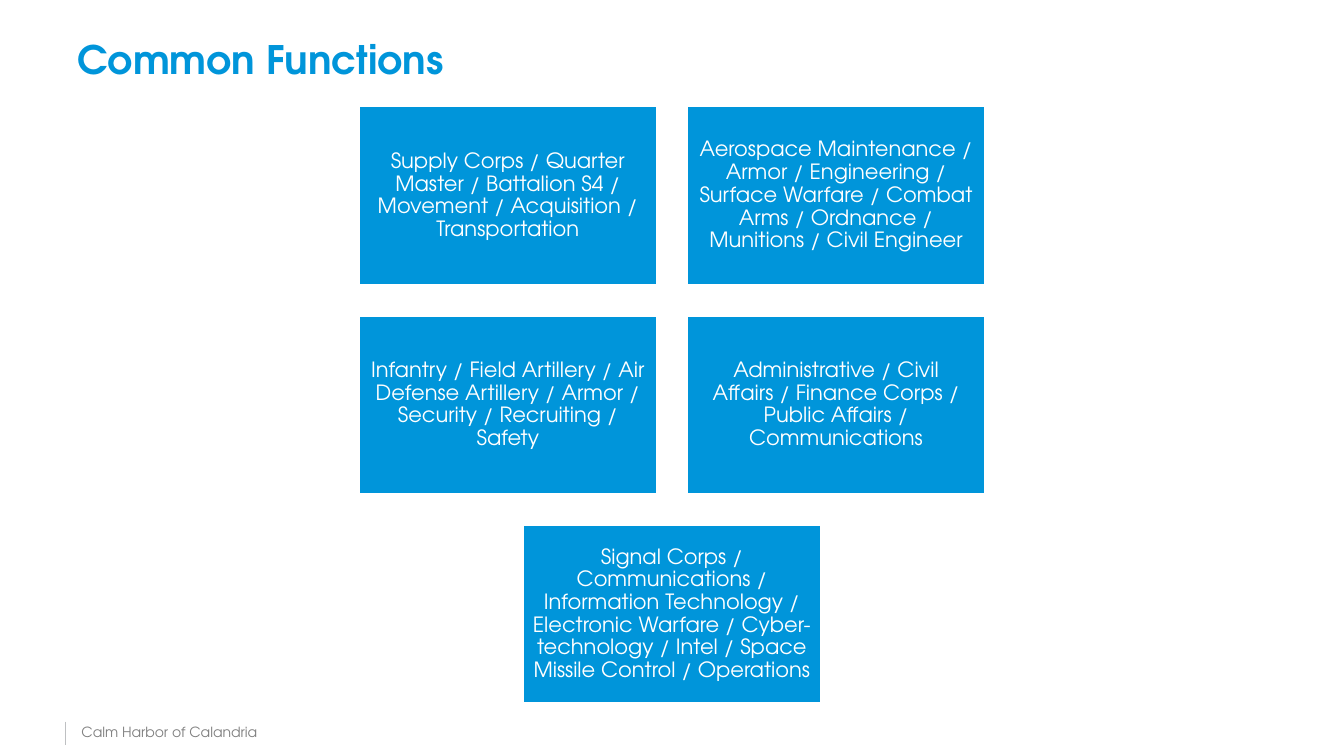
"""Build the Common Functions slide: centred rows of military function groups."""
import pptx
import pptx.dml.color
import pptx.enum.shapes
import pptx.enum.text
import pptx.util
from dataclasses import dataclass
from lxml import etree

TITLE = "Common Functions"
FOOTER = "Calm Harbor of Calandria"
FUNCTION_ROWS = [
    [
        "Supply Corps / Quarter Master / Battalion S4 / Movement / Acquisition / Transportation",
        "Aerospace Maintenance / Armor / Engineering / Surface Warfare / Combat Arms / "
        "Ordnance / Munitions / Civil Engineer",
    ],
    [
        "Infantry / Field Artillery / Air Defense Artillery / Armor / Security / Recruiting / Safety",
        "Administrative / Civil Affairs / Finance Corps / Public Affairs / Communications",
    ],
    [
        "Signal Corps / Communications / Information Technology / Electronic Warfare / "
        "Cyber-technology / Intel / Space Missile Control / Operations",
    ],
]

SLIDE_W, SLIDE_H = 13.33, 7.5
CARD_W, CARD_H = 2.96, 1.78
CARD_GAP = CARD_W / 10
CARDS_TOP = 1.05
CARD_INSET = 0.06

Inches = pptx.util.Inches
Pt = pptx.util.Pt


@dataclass(frozen=True)
class Theme:
    font: str = "TeX Gyre Adventor"
    blue: str = "0095DA"
    white: str = "FFFFFF"
    grey: str = "808080"
    rule: str = "BEC0C2"
    title_size: int = 28
    card_size: int = 15
    footer_size: int = 10


THEME = Theme()


def rgb(value):
    return pptx.dml.color.RGBColor.from_string(value)


def add_run(paragraph, text, size, color, bold=False):
    run = paragraph.add_run()
    run.text = text
    run.font.name = THEME.font
    run.font.size = Pt(size)
    run.font.bold = bold
    run.font.color.rgb = rgb(color)


def add_label(slide, box, text, size, color, bold=False):
    label = slide.shapes.add_textbox(*map(Inches, box))
    label.text_frame.word_wrap = True
    add_run(label.text_frame.paragraphs[0], text, size, color, bold)


def add_card(slide, left, top, functions):
    card = slide.shapes.add_shape(
        pptx.enum.shapes.MSO_SHAPE.RECTANGLE,
        Inches(left), Inches(top), Inches(CARD_W), Inches(CARD_H),
    )
    card.shadow.inherit = False
    card.fill.solid()
    card.fill.fore_color.rgb = rgb(THEME.blue)
    card.line.color.rgb = rgb(THEME.white)
    card.line.width = Pt(2)
    frame = card.text_frame
    frame.word_wrap = True
    frame.vertical_anchor = pptx.enum.text.MSO_ANCHOR.MIDDLE
    frame.margin_left = frame.margin_right = Inches(CARD_INSET)
    frame.margin_top = frame.margin_bottom = Inches(CARD_INSET)
    paragraph = frame.paragraphs[0]
    paragraph.alignment = pptx.enum.text.PP_ALIGN.CENTER
    paragraph.line_spacing = 0.9
    add_run(paragraph, functions, THEME.card_size, THEME.white)


def add_footer(slide):
    rule = slide.shapes.add_connector(
        pptx.enum.shapes.MSO_CONNECTOR.STRAIGHT,
        Inches(0.65), Inches(7.16), Inches(0.65), Inches(7.39),
    )
    rule.line.color.rgb = rgb(THEME.rule)
    rule.line.width = Pt(0.5)
    etree.SubElement(rule._element.spPr, pptx.oxml.ns.qn("a:effectLst"))
    add_label(slide, (0.71, 7.13, 2.86, 0.27), FOOTER, THEME.footer_size, THEME.grey)


def main():
    deck = pptx.Presentation()
    deck.slide_width, deck.slide_height = Inches(SLIDE_W), Inches(SLIDE_H)
    slide = deck.slides.add_slide(deck.slide_layouts[6])
    add_footer(slide)
    add_label(slide, (0.67, 0.3, 12, 0.65), TITLE, THEME.title_size, THEME.blue, bold=True)
    for row, cards in enumerate(FUNCTION_ROWS):
        row_width = len(cards) * (CARD_W + CARD_GAP) - CARD_GAP
        row_left = (SLIDE_W - row_width) / 2
        top = CARDS_TOP + row * (CARD_H + CARD_GAP)
        for column, functions in enumerate(cards):
            add_card(slide, row_left + column * (CARD_W + CARD_GAP), top, functions)
    deck.save("out.pptx")


if __name__ == "__main__":
    main()
